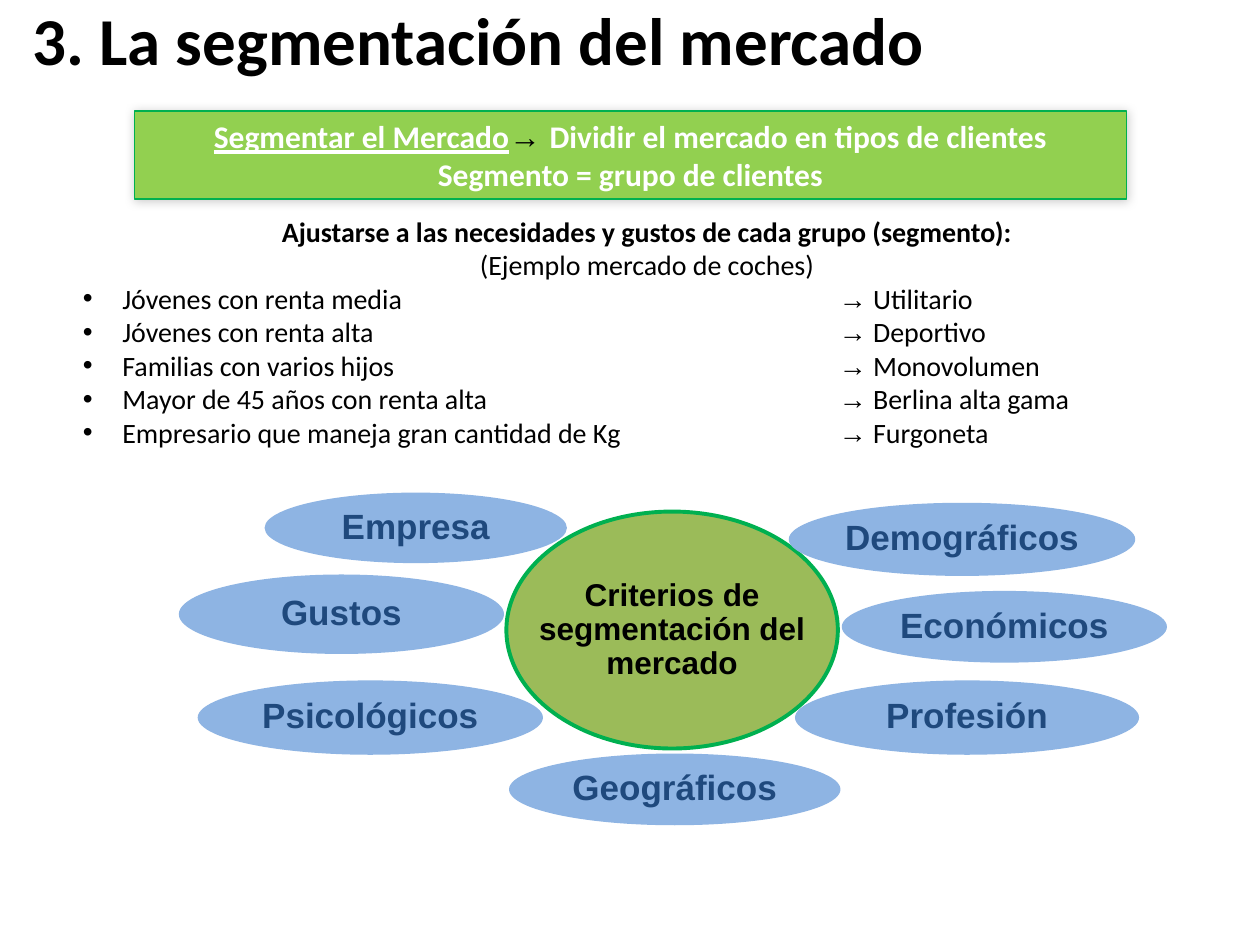
import pptx
import pptx.dml.color
import pptx.enum.shapes
import pptx.enum.text
import pptx.util
import lxml.etree
import pptx.oxml.ns

Pt = pptx.util.Pt
qn = pptx.oxml.ns.qn
SHAPE = pptx.enum.shapes.MSO_SHAPE
ANCHOR = pptx.enum.text.MSO_ANCHOR
CENTER = pptx.enum.text.PP_ALIGN.CENTER

# Content: boxes are left, top, width, height in points
TITLE = "3. La segmentación del mercado"
DEFINITION = [
    ("Segmentar el Mercado", "Calibri", "FFFFFF", True),
    ("→ ", "Arial", "000000", False),
    ("Dividir el mercado en tipos de clientes Segmento = grupo de clientes",
     "Calibri", "FFFFFF", False),
]
INTRO = [
    ("Ajustarse a las necesidades y gustos de cada grupo (segmento):", True),
    ("(Ejemplo mercado de coches)", False),
]
SEGMENTS = [
    ("Jóvenes con renta media", "Utilitario"),
    ("Jóvenes con renta alta", "Deportivo"),
    ("Familias con varios hijos", "Monovolumen"),
    ("Mayor de 45 años con renta alta", "Berlina alta gama"),
    ("Empresario que maneja gran cantidad de Kg", "Furgoneta"),
]
CORE = ("Criterios de segmentación del mercado", (289.4, 292.3, 189.4, 135.4))
CRITERIA = [
    ("Geográficos", (290.9, 430.6, 189.4, 41)),
    ("Demográficos", (450.7, 287.3, 198, 41.8)),
    ("Económicos", (481, 337.7, 185.8, 41)),
    ("Profesión", (454.3, 388.8, 196.6, 42.5)),
    ("Psicológicos", (113, 388.8, 197.3, 42.5)),
    ("Gustos", (102.2, 328.3, 185.8, 45.4)),
    ("Empresa", (151.2, 281.5, 172.8, 40.3)),
]
INDENT = 22.5
TAB_STOP = 432


def rgb(value):
    return pptx.dml.color.RGBColor.from_string(value)


def style(font, size=None, name=None, color=None, bold=None):
    if size:
        font.size = Pt(size)
    if name:
        font.name = name
    if color:
        font.color.rgb = rgb(color)
    if bold is not None:
        font.bold = bold


def add_shape(parent, kind, box, fill, line=None, line_width=0):
    shape = parent.add_shape(kind, *map(Pt, box))
    shape.shadow.inherit = False
    shape.fill.solid()
    shape.fill.fore_color.rgb = rgb(fill)
    if line:
        shape.line.color.rgb = rgb(line)
        shape.line.width = Pt(line_width)
    else:
        shape.line.fill.background()
    return shape


def add_text(parent, box, anchor=ANCHOR.TOP):
    frame = parent.add_textbox(*map(Pt, box)).text_frame
    frame.word_wrap = True
    frame.vertical_anchor = anchor
    return frame


def add_oval(parent, text, box, fill, size, color, line=None):
    add_shape(parent, SHAPE.OVAL, box, fill, line, 2.25)
    frame = add_text(parent, box, ANCHOR.MIDDLE)
    frame.margin_left = frame.margin_right = Pt(2)
    frame.margin_top = frame.margin_bottom = Pt(2)
    label = frame.paragraphs[0]
    label.text = text
    label.alignment = CENTER
    label.line_spacing = 0.9
    style(label.font, size, "Arial", color, True)


def add_bullet_and_tab(paragraph):
    props = paragraph._p.get_or_add_pPr()
    props.set("marL", str(Pt(INDENT)))
    props.set("indent", str(-Pt(INDENT)))
    lxml.etree.SubElement(props, qn("a:buFont"), typeface="Arial")
    lxml.etree.SubElement(props, qn("a:buChar"), char="•")
    tabs = lxml.etree.SubElement(props, qn("a:tabLst"))
    lxml.etree.SubElement(tabs, qn("a:tab"), pos=str(Pt(TAB_STOP)), algn="l")


def add_glow_shadow(shape, color, alpha, blur):
    effects = shape._element.spPr.find(qn("a:effectLst"))
    shadow = lxml.etree.SubElement(effects, qn("a:outerShdw"), blurRad=str(Pt(blur)),
                                   dist="0", dir="0", rotWithShape="0")
    tint = lxml.etree.SubElement(shadow, qn("a:srgbClr"), val=color)
    lxml.etree.SubElement(tint, qn("a:alpha"), val=str(alpha * 1000))


deck = pptx.Presentation()
deck.slide_width, deck.slide_height = Pt(720), Pt(540)
shapes = deck.slides.add_slide(deck.slide_layouts[6]).shapes

# Example segments and the car that suits each
examples = add_text(shapes, (40.3, 118.8, 658.8, 141))
for index, (text, bold) in enumerate(INTRO):
    intro = examples.add_paragraph() if index else examples.paragraphs[0]
    intro.text = text
    intro.alignment = CENTER
    style(intro.font, 16, "Calibri", "000000", bold)
for customer, car in SEGMENTS:
    row = examples.add_paragraph()
    add_bullet_and_tab(row)
    style(row.font, 16, color="000000")
    for text, font in ((customer + "\t", "Calibri"), ("→", "Arial"), (" " + car, "Calibri")):
        run = row.add_run()
        run.text = text
        run.font.name = font

# Title
title = add_text(shapes, (11.5, 3.6, 648, 45.4), ANCHOR.MIDDLE).paragraphs[0]
title.text = TITLE
title.line_spacing = 0.8
style(title.font, 38.3, "Calibri", "000000", True)

# Definition banner
banner = add_shape(shapes, SHAPE.RECTANGLE, (77, 63.4, 566.6, 50.4), "92D050", "00B050")
add_glow_shadow(banner, "000000", 20, 6)
banner.text_frame.word_wrap = True
banner.text_frame.vertical_anchor = ANCHOR.TOP
banner.text_frame.margin_left = banner.text_frame.margin_right = Pt(10)
definition = banner.text_frame.paragraphs[0]
definition.alignment = CENTER
style(definition.font, 18, bold=True)
for text, font, color, underline in DEFINITION:
    run = definition.add_run()
    run.text = text
    style(run.font, name=font, color=color)
    run.font.underline = underline

# Segmentation criteria around the core
diagram = shapes.add_group_shape().shapes
add_oval(diagram, *CORE, "9BBB59", 18, "000000", "00B050")
for text, box in CRITERIA:
    add_oval(diagram, text, box, "8EB4E3", 20, "1F497D")

deck.save("out.pptx")
